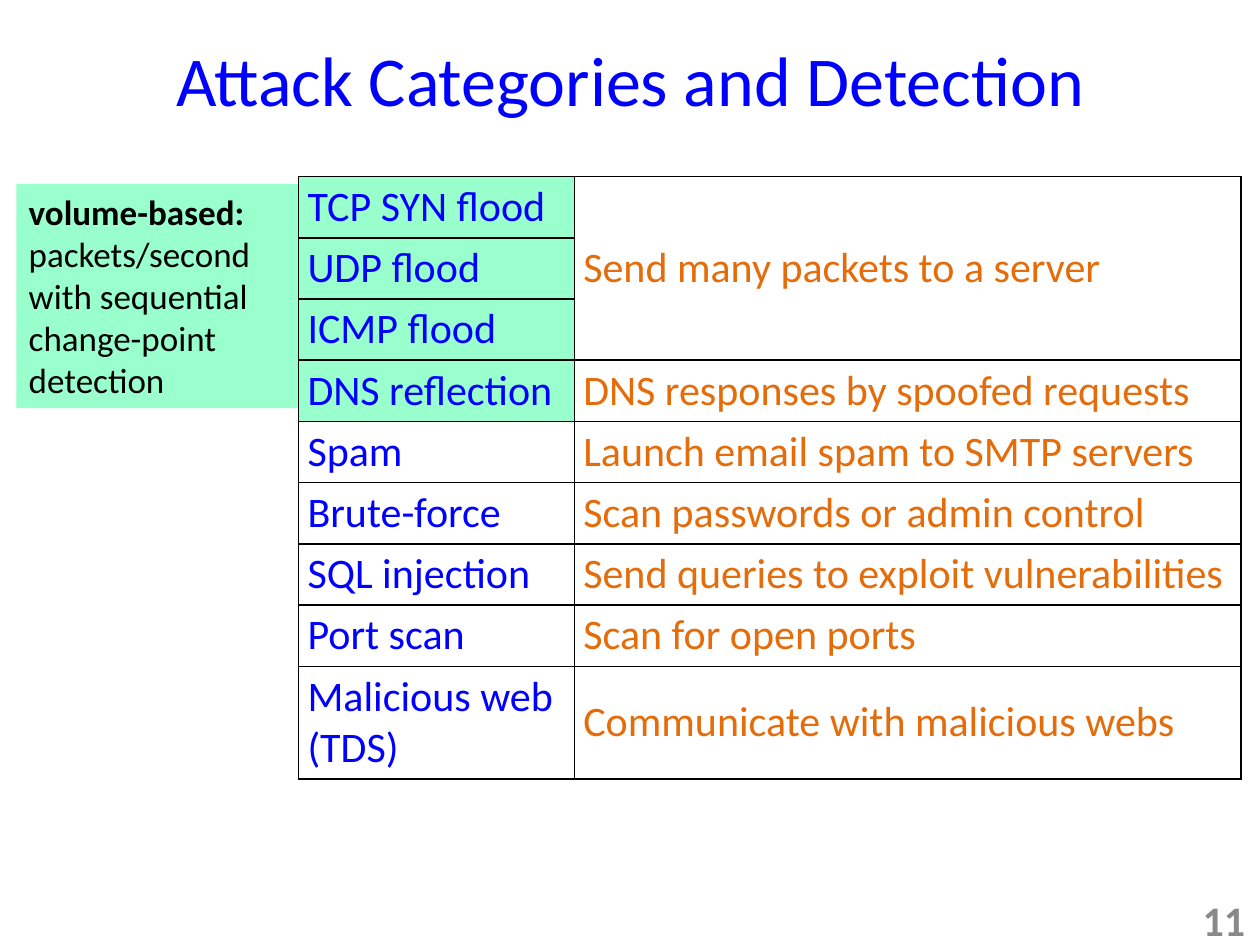
from lxml.etree import SubElement
from pptx import Presentation
from pptx.dml.color import RGBColor
from pptx.enum.shapes import MSO_SHAPE as Shape
from pptx.enum.text import MSO_ANCHOR as Anchor, MSO_AUTO_SIZE as AutoSize, PP_ALIGN as Align
from pptx.oxml.ns import qn
from pptx.util import Cm, Pt

BLUE = RGBColor(0x00, 0x00, 0xFF)
ORANGE = RGBColor(0xE4, 0x6C, 0x0A)
MINT = RGBColor(0x99, 0xFF, 0xCC)
GRAY = RGBColor(0x89, 0x89, 0x89)
BLACK = RGBColor(0x00, 0x00, 0x00)
FONT = "Calibri"

# Attack category, how it shows in traffic (None continues the cell above)
ATTACKS = [
    ("TCP SYN flood", "Send many packets to a server"),
    ("UDP flood", None),
    ("ICMP flood", None),
    ("DNS reflection", "DNS responses by spoofed requests"),
    ("Spam", "Launch email spam to SMTP servers"),
    ("Brute-force", "Scan passwords or admin control"),
    ("SQL injection", "Send queries to exploit vulnerabilities"),
    ("Port scan", "Scan for open ports"),
    ("Malicious web\n(TDS)", "Communicate with malicious webs"),
]
VOLUME_BASED = 4  # leading rows covered by the note
FLOODS = 3  # leading rows sharing one description
ROW_H, LAST_ROW_H = Cm(1.22), Cm(2.26)


def style(tf, size, color, bold=None, align=None):
    for p in tf.paragraphs:
        p.font.name, p.font.size, p.font.bold = FONT, Pt(size), bold
        p.font.color.rgb = color
        p.alignment = align


def add_title(slide, text):
    title = slide.shapes.title
    title.left, title.top, title.width, title.height = Cm(0), Cm(0), Cm(25.4), Cm(3.18)
    tf = title.text_frame
    tf.text = text
    tf.auto_size = AutoSize.NONE
    tf.vertical_anchor = Anchor.MIDDLE
    style(tf, 40, BLUE, align=Align.CENTER)


def add_note(slide, heading, body):
    sp = slide.shapes.add_shape(Shape.RECTANGLE, Cm(0.33), Cm(3.71), Cm(5.82), Cm(4.52))
    sp.shadow.inherit = False
    sp.fill.solid()
    sp.fill.fore_color.rgb = MINT
    sp.line.fill.background()
    tf = sp.text_frame
    tf.word_wrap = True
    tf.vertical_anchor = Anchor.TOP
    p = tf.paragraphs[0]
    r = p.add_run()
    r.text = heading
    r.font.bold = True
    p.add_run().text = body
    style(tf, 20, BLACK, align=Align.LEFT)


def add_borders(cell):
    tc_pr = cell._tc.get_or_add_tcPr()
    for i, side in enumerate(("lnL", "lnR", "lnT", "lnB")):
        ln = SubElement(tc_pr, qn(f"a:{side}"), w=str(Pt(1)))
        fill = SubElement(ln, qn("a:solidFill"))
        SubElement(fill, qn("a:srgbClr"), val=str(BLACK))
        tc_pr.insert(i, ln)  # borders come before the cell fill


def format_cell(cell, text, color, fill=None, anchor=Anchor.TOP):
    cell.margin_left = cell.margin_right = Cm(0.18)
    cell.margin_top = cell.margin_bottom = Cm(0.1)
    cell.vertical_anchor = anchor
    if fill is None:
        cell.fill.background()
    else:
        cell.fill.solid()
        cell.fill.fore_color.rgb = fill
    if text:
        cell.text_frame.text = text
    style(cell.text_frame, 24, color)
    add_borders(cell)


def add_attack_table(slide):
    last = len(ATTACKS) - 1
    table = slide.shapes.add_table(
        len(ATTACKS), 2, Cm(6.02), Cm(3.56), Cm(19), ROW_H * last + LAST_ROW_H).table
    table.first_row = table.horz_banding = False
    table.columns[0].width, table.columns[1].width = Cm(5.56), Cm(13.44)
    for i, (attack, behavior) in enumerate(ATTACKS):
        table.rows[i].height = LAST_ROW_H if i == last else ROW_H
        format_cell(table.cell(i, 0), attack, BLUE, MINT if i < VOLUME_BASED else None)
        anchor = Anchor.MIDDLE if i in (0, last) else Anchor.TOP
        format_cell(table.cell(i, 1), behavior, ORANGE, anchor=anchor)
    table.cell(0, 1).merge(table.cell(FLOODS - 1, 1))


def add_page_number(slide, number):
    tf = slide.shapes.add_textbox(Cm(19.43), Cm(18.03), Cm(5.92), Cm(1.02)).text_frame
    tf.word_wrap = True
    tf.vertical_anchor = Anchor.MIDDLE
    tf.text = str(number)
    style(tf, 24, GRAY, bold=True, align=Align.RIGHT)


def main():
    prs = Presentation()
    prs.slide_width, prs.slide_height = Cm(25.4), Cm(19.05)
    slide = prs.slides.add_slide(prs.slide_layouts[5])  # title only
    add_note(slide, "volume-based: ",
             "packets/second with sequential change-point detection")
    add_title(slide, "Attack Categories and Detection")
    add_attack_table(slide)
    add_page_number(slide, 11)
    prs.save("out.pptx")


if __name__ == "__main__":
    main()
